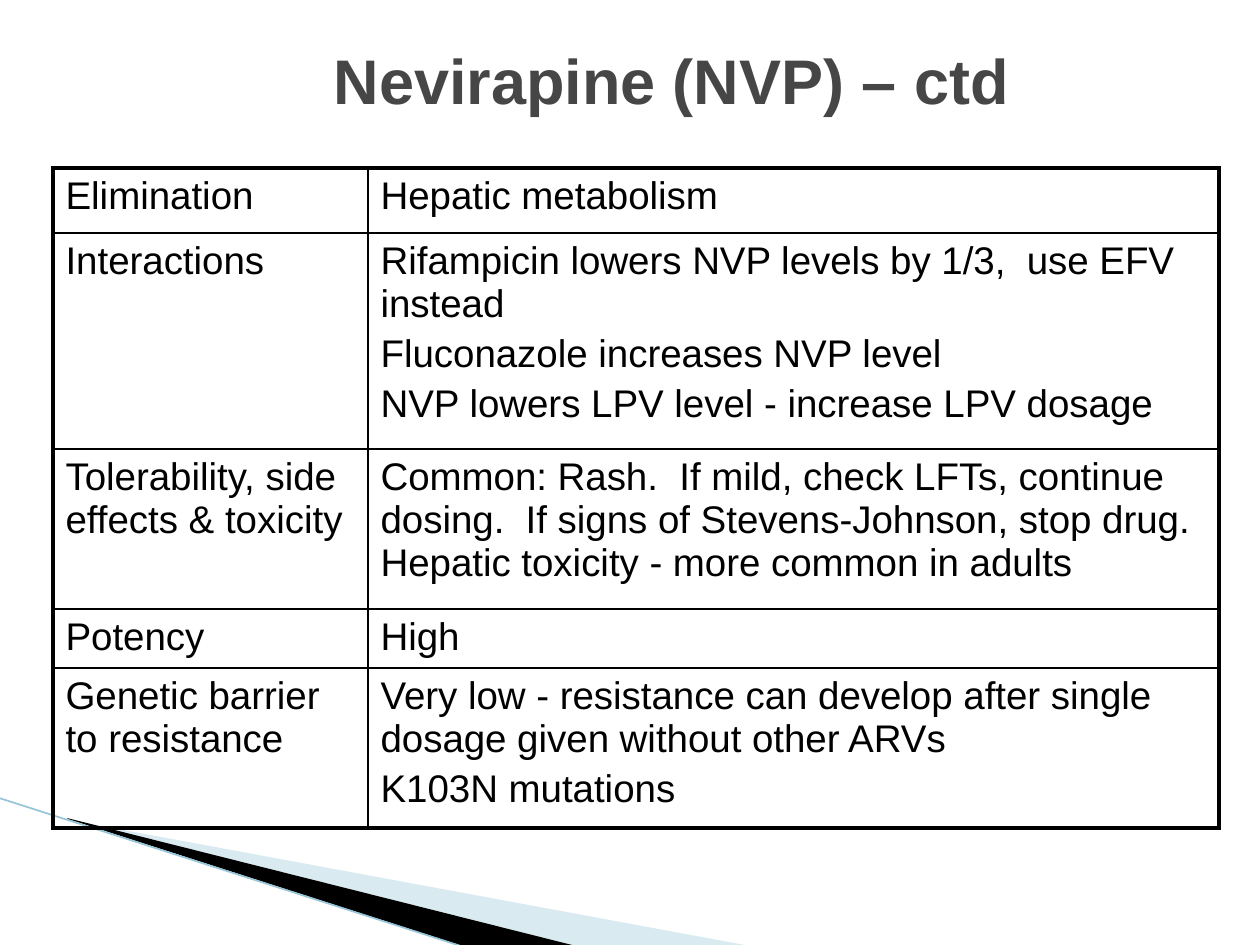
from lxml.etree import SubElement
from pptx import Presentation
from pptx.dml.color import RGBColor
from pptx.enum.shapes import MSO_CONNECTOR
from pptx.enum.text import MSO_ANCHOR, PP_ALIGN
from pptx.oxml import parse_xml
from pptx.oxml.ns import nsdecls, qn
from pptx.util import Pt

SCALE = 914400 / 126  # EMU per px


def px(*lengths):
    return [round(length * SCALE) for length in lengths]


def color(value):
    return RGBColor.from_string(value)


presentation = Presentation()
presentation.slide_width, presentation.slide_height = px(1260, 945)
slide = presentation.slides.add_slide(presentation.slide_layouts[6])

# Corner wedges and line
wedges = [
    ([(69, 820), (750, 946), (575, 946), (69, 819)], "A0CBDC", 40),
    ([(67, 818), (576, 946), (469, 948), (68, 819)], "000000", 100),
]
for points, fill_color, opacity in wedges:
    builder = slide.shapes.build_freeform(*points[0], scale=SCALE)
    builder.add_line_segments(points[1:], close=True)
    wedge = builder.convert_to_shape()
    wedge.shadow.inherit = False
    wedge.line.fill.background()
    wedge.fill.solid()
    wedge.fill.fore_color.rgb = color(fill_color)
    if opacity < 100:
        color_element = wedge.fill._xPr.find(qn("a:solidFill"))[0]
        SubElement(color_element, qn("a:alpha"), val=str(opacity * 1000))

corner_line = slide.shapes.add_connector(MSO_CONNECTOR.STRAIGHT, *px(-1, 798, 467, 948))
corner_line.line.color.rgb = color("97C5D8")
corner_line.line.width = Pt(0.95)
SubElement(corner_line._element.spPr, qn("a:effectLst"))

# Title
title = slide.shapes.add_textbox(*px(136, 32, 1071, 95))
title.text_frame.word_wrap = True
title.text_frame.vertical_anchor = MSO_ANCHOR.MIDDLE
paragraph = title.text_frame.paragraphs[0]
paragraph.text = "Nevirapine (NVP) – ctd"
paragraph.alignment = PP_ALIGN.CENTER
title_format = {"name": "Arial", "size": Pt(36), "bold": True}
for attribute, value in title_format.items():
    setattr(paragraph.font, attribute, value)
paragraph.font.color.rgb = color("464646")

# Drug property table
rows = [
    (65, "Elimination", ["Hepatic metabolism"]),
    (216, "Interactions", [
        "Rifampicin lowers NVP levels by 1/3,  use EFV instead",
        "Fluconazole increases NVP level",
        "NVP lowers LPV level - increase LPV dosage",
    ]),
    (160, "Tolerability, side effects & toxicity", [
        "Common: Rash.  If mild, check LFTs, continue dosing.  "
        "If signs of Stevens-Johnson, stop drug.  "
        "Hepatic toxicity - more common in adults",
    ]),
    (59, "Potency", ["High"]),
    (160, "Genetic barrier to resistance", [
        "Very low - resistance can develop after single dosage given without other ARVs",
        "K103N mutations",
    ]),
]
column_widths = px(315, 851)
table_height = sum(height for height, _, _ in rows)
table = slide.shapes.add_table(
    len(rows), len(column_widths), *px(53, 168, 1166, table_height)
).table
table.first_row = table.horz_banding = False
for column, width in zip(table.columns, column_widths):
    column.width = width

cell_format = {"name": "Arial", "size": Pt(22), "bold": False}
last_row, last_column = len(rows) - 1, len(column_widths) - 1
for row_index, (height, label, details) in enumerate(rows):
    table.rows[row_index].height = px(height)[0]
    for column_index, lines in enumerate([[label], details]):
        cell = table.cell(row_index, column_index)
        cell.fill.background()
        cell.text = "\n".join(lines)
        for index, paragraph in enumerate(cell.text_frame.paragraphs):
            if index:
                paragraph.space_before = Pt(4)
            for attribute, value in cell_format.items():
                setattr(paragraph.font, attribute, value)
            paragraph.font.color.rgb = color("000000")

        outer_edges = {
            "lnL": column_index == 0,
            "lnR": column_index == last_column,
            "lnT": row_index == 0,
            "lnB": row_index == last_row,
        }
        properties = cell._tc.get_or_add_tcPr()
        for position, (edge, is_outer) in enumerate(outer_edges.items()):
            width = Pt(2.25 if is_outer else 1)
            properties.insert(position, parse_xml(
                f'<a:{edge} {nsdecls("a")} w="{width}"><a:solidFill>'
                f'<a:srgbClr val="000000"/></a:solidFill></a:{edge}>'
            ))

presentation.save("out.pptx")
